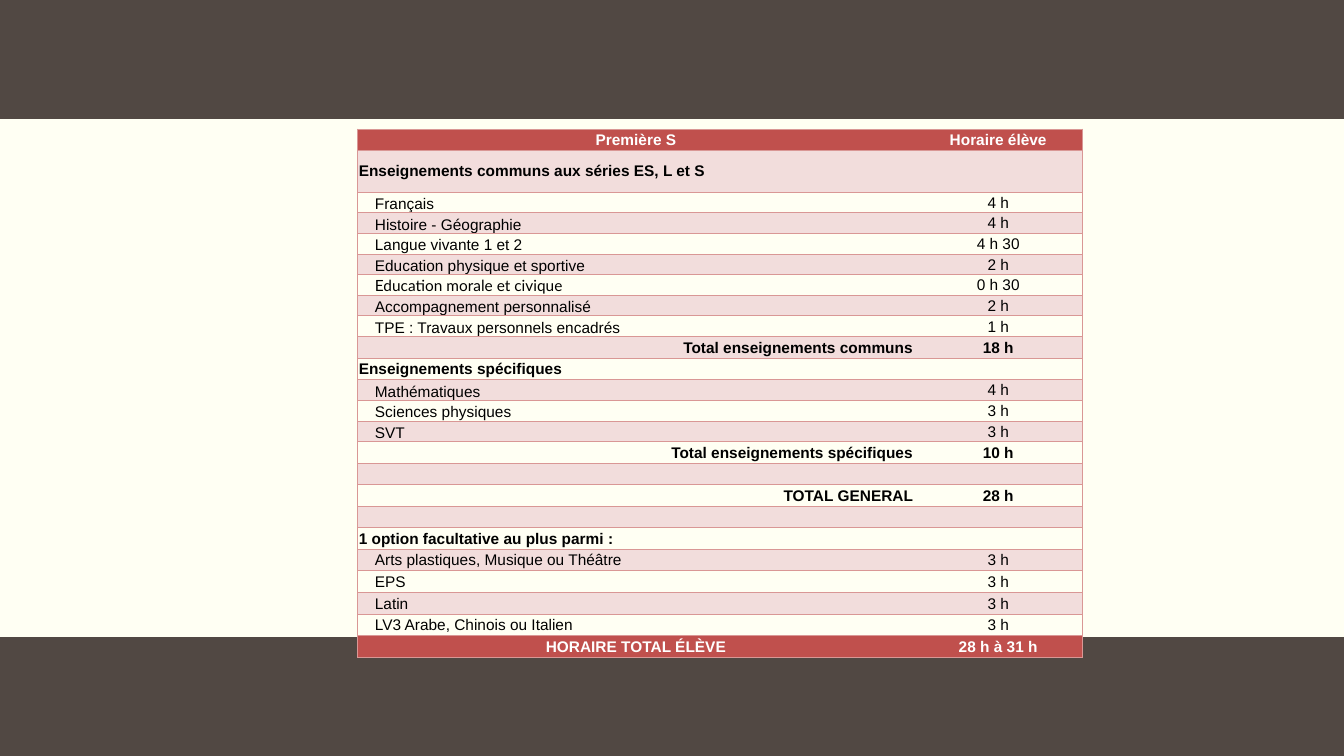
import pptx
import pptx.util
import pptx.dml.color
import pptx.enum.shapes
import pptx.enum.text
import pptx.oxml.ns
import lxml.etree

PX = 4572
WIDE, HIGH = 2667, 1500
BAND = 236
LEFT, TOP = 710, 256
COLS = (1104, 334)
PAD = 2
DEEP = 34

ALIGN = pptx.enum.text.PP_ALIGN
ANCHOR = pptx.enum.text.MSO_ANCHOR

THEME = {
    "page": "FFFFF3",
    "band": "514843",
    "head": "C0504D",
    "stripe": "F2DDDC",
    "line": "D99795",
    "ink": "000000",
    "light": "FFFFFF",
    "size": 11,
    "rule": 0.5,
    "font": "Arial",
    "other": "Lato",
}

KINDS = {
    "head": {"tall": 42, "align": ALIGN.CENTER, "bold": True},
    "part": {"tall": 43, "align": ALIGN.LEFT, "bold": True},
    "item": {"tall": 41, "align": ALIGN.LEFT, "bold": False,
             "pad": DEEP, "anchor": ANCHOR.BOTTOM},
    "pick": {"tall": 43, "align": ALIGN.LEFT, "bold": False, "pad": DEEP},
    "sum": {"tall": 43, "align": ALIGN.RIGHT, "bold": True},
    "gap": {"tall": 42, "align": ALIGN.LEFT, "bold": False},
}

ROWS = [
    ("head", "Première S", "Horaire élève", {}),
    ("part", "Enseignements communs aux séries ES, L et S", "", {"tall": 83}),
    ("item", "Français", "4 h", {}),
    ("item", "Histoire - Géographie", "4 h", {}),
    ("item", "Langue vivante 1 et 2", "4 h 30", {}),
    ("item", "Education physique et sportive", "2 h", {}),
    ("item", "Education morale et civique", "0 h 30", {"font": THEME["other"]}),
    ("item", "Accompagnement personnalisé", "2 h", {}),
    ("item", "TPE : Travaux personnels encadrés", "1 h", {}),
    ("sum", "Total enseignements communs", "18 h", {}),
    ("part", "Enseignements spécifiques", "", {}),
    ("item", "Mathématiques", "4 h", {}),
    ("item", "Sciences physiques", "3 h", {}),
    ("item", "SVT", "3 h", {}),
    ("sum", "Total enseignements spécifiques", "10 h", {}),
    ("gap", "", "", {}),
    ("sum", "TOTAL GENERAL", "28 h", {}),
    ("gap", "", "", {}),
    ("part", "1 option facultative au plus parmi :", "", {}),
    ("pick", "Arts plastiques, Musique ou Théâtre", "3 h", {}),
    ("pick", "EPS", "3 h", {}),
    ("pick", "Latin", "3 h", {}),
    ("pick", "LV3 Arabe, Chinois ou Italien", "3 h", {}),
    ("head", "HORAIRE TOTAL ÉLÈVE", "28 h à 31 h", {}),
]


def emu(px):
    return pptx.util.Emu(px * PX)


def put(thing, vals):
    for name, val in vals.items():
        setattr(thing, name, val)


def paint(fill, tint):
    if tint is None:
        fill.background()
    else:
        fill.solid()
        fill.fore_color.rgb = pptx.dml.color.RGBColor.from_string(tint)


def band(slide, top):
    rect = pptx.enum.shapes.MSO_SHAPE.RECTANGLE
    shape = slide.shapes.add_shape(rect, 0, emu(top), emu(WIDE), emu(BAND))
    shape.shadow.inherit = False
    shape.line.fill.background()
    paint(shape.fill, THEME["band"])


def edge(cell, sides):
    props = cell._tc.get_or_add_tcPr()
    tag = pptx.oxml.ns.qn
    width = str(pptx.util.Pt(THEME["rule"]))
    for side in "LRTB":
        line = lxml.etree.SubElement(props, tag("a:ln" + side), w=width)
        if side in sides:
            fill = lxml.etree.SubElement(line, tag("a:solidFill"))
            lxml.etree.SubElement(fill, tag("a:srgbClr"), val=THEME["line"])
        else:
            lxml.etree.SubElement(line, tag("a:noFill"))


def write(cell, text, align, look, ink):
    para = cell.text_frame.paragraphs[0]
    para.alignment = align
    if text:
        run = para.add_run()
        run.text = text
        put(run.font, look)
        run.font.color.rgb = pptx.dml.color.RGBColor.from_string(ink)
    else:
        lxml.etree.SubElement(para._p, pptx.oxml.ns.qn("a:endParaRPr"),
                              sz=str(THEME["size"] * 100))


def fill_row(table, num, row):
    kind, label, hours, more = row
    form = {"pad": PAD, "anchor": ANCHOR.MIDDLE, "font": THEME["font"],
            **KINDS[kind], **more}
    table.rows[num].height = emu(form["tall"])
    head = kind == "head"
    tint = THEME["head"] if head else THEME["stripe"] if num % 2 else None
    ink = THEME["light"] if head else THEME["ink"]
    parts = (
        (label, form["align"], form["pad"], form["anchor"], form["font"], "LTB"),
        (hours, ALIGN.CENTER, PAD, ANCHOR.MIDDLE, THEME["font"], "RTB"),
    )
    for col, (text, align, pad, anchor, font, sides) in enumerate(parts):
        cell = table.cell(num, col)
        put(cell, {"margin_left": emu(pad), "margin_top": emu(PAD),
                   "margin_right": emu(PAD), "margin_bottom": 0,
                   "vertical_anchor": anchor})
        edge(cell, sides)
        paint(cell.fill, tint)
        look = {"name": font, "bold": form["bold"],
                "size": pptx.util.Pt(THEME["size"])}
        write(cell, text, align, look, ink)


def grid(slide):
    tall = sum({**KINDS[kind], **more}["tall"] for kind, _, _, more in ROWS)
    frame = slide.shapes.add_table(len(ROWS), len(COLS), emu(LEFT), emu(TOP),
                                   emu(sum(COLS)), emu(tall))
    table = frame.table
    put(table, {"first_row": False, "horz_banding": False})
    for col, width in zip(table.columns, COLS):
        col.width = emu(width)
    for num, row in enumerate(ROWS):
        fill_row(table, num, row)


def main():
    deck = pptx.Presentation()
    put(deck, {"slide_width": emu(WIDE), "slide_height": emu(HIGH)})
    slide = deck.slides.add_slide(deck.slide_layouts[6])
    paint(slide.background.fill, THEME["page"])
    for top in (HIGH - BAND, 0):
        band(slide, top)
    grid(slide)
    deck.save("out.pptx")


if __name__ == "__main__":
    main()
